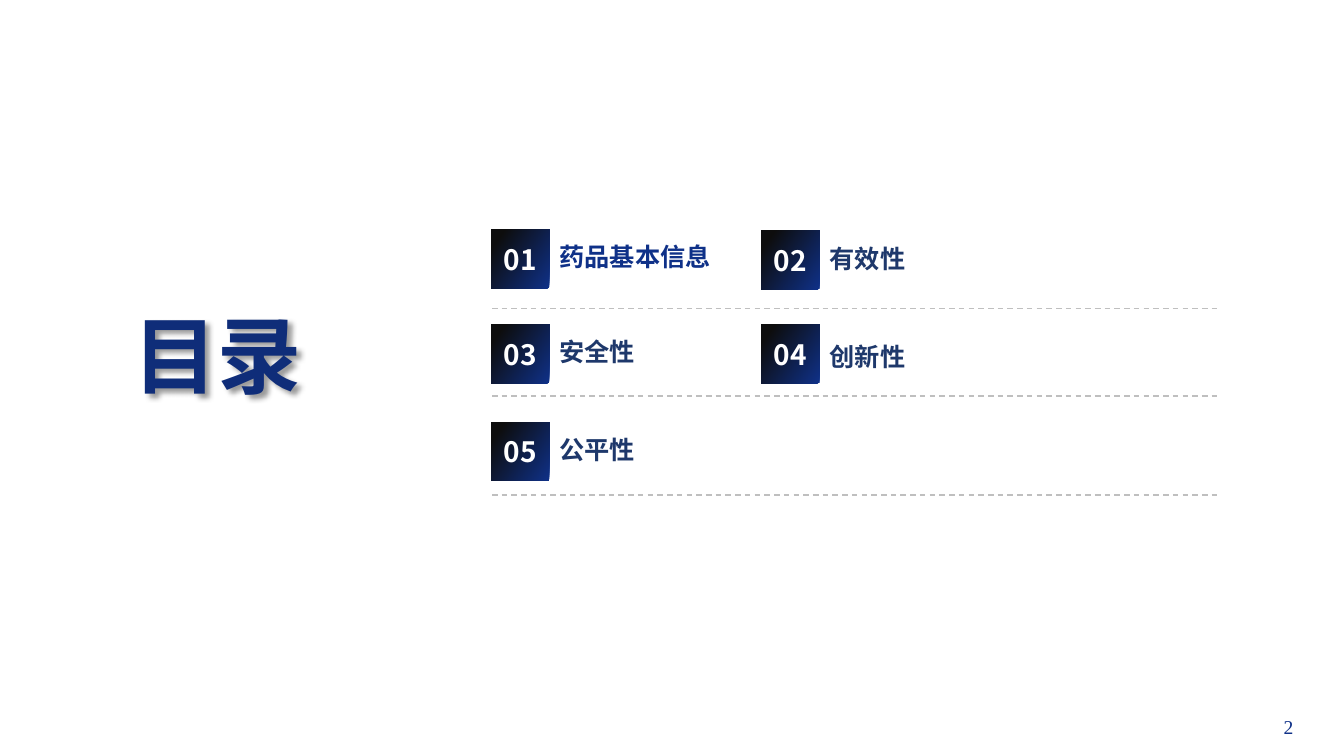
from lxml import etree
from pptx import Presentation
from pptx.dml.color import RGBColor
from pptx.enum.dml import MSO_LINE
from pptx.enum.shapes import MSO_CONNECTOR, MSO_SHAPE
from pptx.enum.text import MSO_ANCHOR, PP_ALIGN
from pptx.oxml import parse_xml
from pptx.oxml.ns import nsdecls, qn
from pptx.util import Inches, Pt

RECTANGLE = MSO_SHAPE.RECTANGLE
STRAIGHT = MSO_CONNECTOR.STRAIGHT
DASH = MSO_LINE.DASH
TOP, MIDDLE = MSO_ANCHOR.TOP, MSO_ANCHOR.MIDDLE
LEFT, CENTER = PP_ALIGN.LEFT, PP_ALIGN.CENTER

HEADING_FONT = "Noto Sans CJK SC"
NUMBER_FONT = "Times New Roman"
BLUE, BLACK, NAVY = "0F3188", "0D0D0D", "1E386B"
BADGE_SIZE = 0.58
LEFT_COLUMN, RIGHT_COLUMN = 4.87, 7.55

# Number, topic, column, badge top, topic top, topic width, topic colour
TOPICS = [
    ("01", "药品基本信息", LEFT_COLUMN, 2.28, 2.19, 3.41, BLUE),
    ("02", "有效性", RIGHT_COLUMN, 2.29, 2.21, 1.42, NAVY),
    ("03", "安全性", LEFT_COLUMN, 3.22, 3.13, 6.57, NAVY),
    ("04", "创新性", RIGHT_COLUMN, 3.22, 3.18, 3.41, NAVY),
    ("05", "公平性", LEFT_COLUMN, 4.19, 4.1, 1.42, NAVY),
]
DIVIDERS = [3.06, 3.93, 4.91]


def rgb(value):
    return RGBColor.from_string(value)


def write(shape, text, size, color, font=HEADING_FONT, bold=True,
          align=LEFT, anchor=MIDDLE, spacing=None):
    frame = shape.text_frame
    frame.word_wrap = True
    frame.vertical_anchor = anchor
    paragraph = frame.paragraphs[0]
    paragraph.text = text
    paragraph.alignment = align
    paragraph.line_spacing = spacing
    paragraph.font.size = Pt(size)
    paragraph.font.bold = bold
    paragraph.font.name = font
    paragraph.font.color.rgb = rgb(color)
    # Chinese characters take the East Asian typeface
    defaults = paragraph._p.pPr.find(qn("a:defRPr"))
    etree.SubElement(defaults, qn("a:ea")).set("typeface", font)


def add_label(slide, left, top, width, height, text, size, color, **style):
    label = slide.shapes.add_textbox(
        Inches(left), Inches(top), Inches(width), Inches(height))
    write(label, text, size, color, **style)
    return label


def add_soft_shadow(shape):
    shape._element.spPr.append(parse_xml(
        f'<a:effectLst {nsdecls("a")}>'
        '<a:outerShdw blurRad="50800" dist="50800" dir="2700000" algn="tl">'
        '<a:srgbClr val="000000"><a:alpha val="40000"/></a:srgbClr>'
        '</a:outerShdw></a:effectLst>'))


def add_badge(slide, left, top, number):
    badge = slide.shapes.add_shape(
        RECTANGLE, Inches(left), Inches(top),
        Inches(BADGE_SIZE), Inches(BADGE_SIZE))
    badge.shadow.inherit = False
    badge.line.fill.background()
    badge.fill.gradient()
    badge.fill.gradient_angle = 145
    stops = zip(badge.fill.gradient_stops, (BLUE, BLACK), (0, 0.87))
    for stop, color, position in stops:
        stop.color.rgb = rgb(color)
        stop.position = position
    write(badge, number, 20, "FFFFFF", align=CENTER)


def add_divider(slide, top):
    divider = slide.shapes.add_connector(
        STRAIGHT, Inches(4.88), Inches(top), Inches(12.08), Inches(top))
    divider.line.color.rgb = rgb("BFBFBF")
    divider.line.width = Pt(1)
    divider.line.dash_style = DASH
    etree.SubElement(divider._element.spPr, qn("a:effectLst"))


def main():
    deck = Presentation()
    deck.slide_width, deck.slide_height = Inches(13.33), Inches(7.5)
    slide = deck.slides.add_slide(deck.slide_layouts[6])

    # Title and page number
    title = add_label(slide, 0.56, 2.96, 3.2, 1.37, "目录", 60, "0F2D79",
                      align=CENTER, anchor=TOP)
    add_soft_shadow(title)
    add_label(slide, 12.44, 7.01, 0.68, 0.4, "2", 14, BLUE,
              font=NUMBER_FONT, bold=False, align=CENTER)

    # Contents
    for top in DIVIDERS:
        add_divider(slide, top)
    for number, topic, column, badge_top, topic_top, width, color in TOPICS:
        add_badge(slide, column, badge_top, number)
        add_label(slide, column + BADGE_SIZE, topic_top, width, 0.75,
                  topic, 18, color, spacing=0.9)

    deck.save("out.pptx")


if __name__ == "__main__":
    main()
